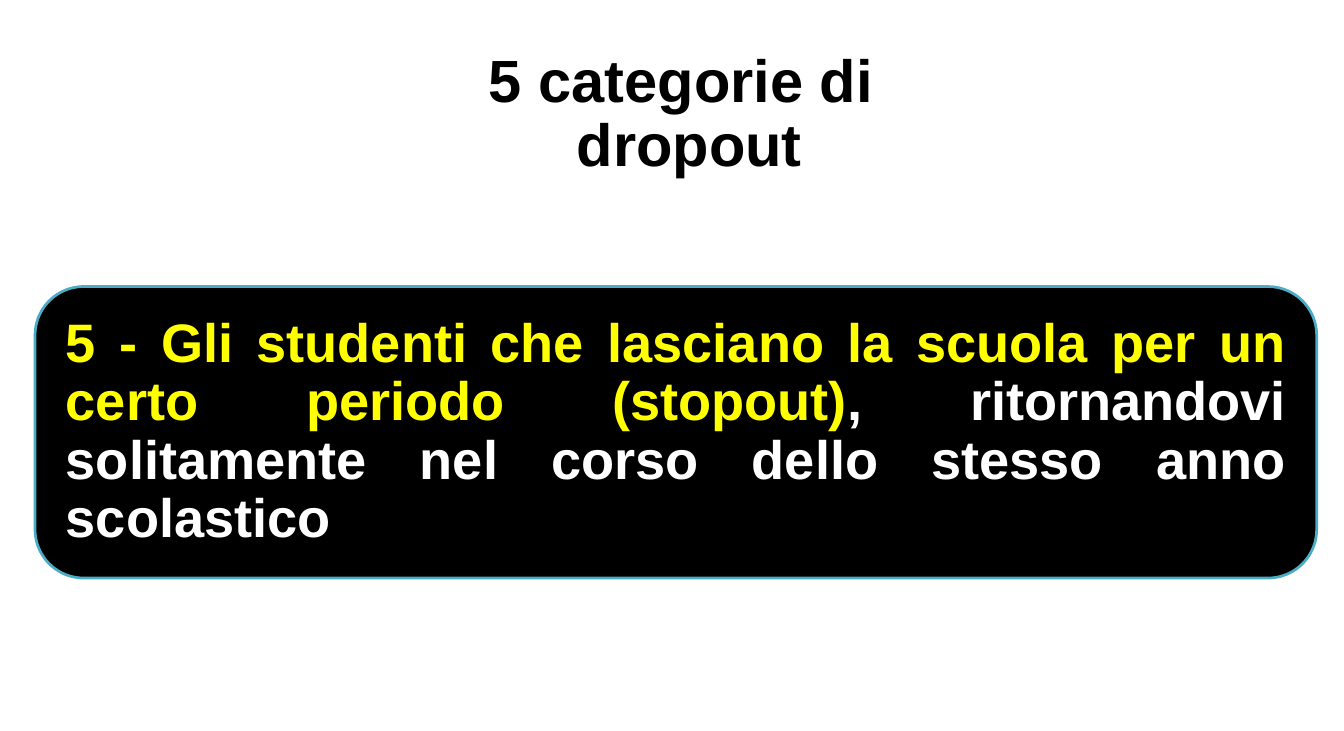
from dataclasses import dataclass

from pptx import Presentation
from pptx.dml.color import RGBColor
from pptx.enum.shapes import MSO_SHAPE
from pptx.enum.text import MSO_ANCHOR, PP_ALIGN
from pptx.util import Emu, Pt

EMU_PER_PX = 9144  # 100 px to the inch

BLACK = RGBColor(0x00, 0x00, 0x00)
WHITE = RGBColor(0xFF, 0xFF, 0xFF)
YELLOW = RGBColor(0xFF, 0xFF, 0x00)
TEAL = RGBColor(0x4B, 0xAC, 0xC6)


@dataclass(frozen=True)
class Span:
    text: str
    color: RGBColor


@dataclass(frozen=True)
class Block:
    left: int
    top: int
    width: int
    height: int
    size: int
    align: PP_ALIGN
    inset_x: int
    inset_y: int
    paragraphs: tuple[tuple[Span, ...], ...]


HEADING = Block(
    239, 46, 936, 145, 44, PP_ALIGN.CENTER, 10, 5,
    ((Span("5 categorie di ", BLACK),), (Span("dropout", BLACK),)),
)
STOPOUT = Block(
    36, 294, 1314, 299, 40, PP_ALIGN.JUSTIFY, 17, 17,
    ((
        Span("5 - Gli studenti che lasciano la scuola per un certo periodo (stopout)", YELLOW),
        Span(", ritornandovi solitamente nel corso dello stesso anno scolastico", WHITE),
    ),),
)


def px(length: int) -> Emu:
    return Emu(length * EMU_PER_PX)


def bounds(block: Block) -> tuple[Emu, Emu, Emu, Emu]:
    return px(block.left), px(block.top), px(block.width), px(block.height)


def write_text(frame, block: Block) -> None:
    frame.word_wrap = True
    frame.vertical_anchor = MSO_ANCHOR.MIDDLE
    frame.margin_left = frame.margin_right = px(block.inset_x)
    frame.margin_top = frame.margin_bottom = px(block.inset_y)
    for index, spans in enumerate(block.paragraphs):
        paragraph = frame.add_paragraph() if index else frame.paragraphs[0]
        paragraph.alignment = block.align
        paragraph.line_spacing = 0.9
        for span in spans:
            run = paragraph.add_run()
            run.text = span.text
            run.font.name = "Arial"
            run.font.size = Pt(block.size)
            run.font.bold = True
            run.font.color.rgb = span.color


def add_panel(slide, block: Block) -> None:
    panel = slide.shapes.add_shape(MSO_SHAPE.ROUNDED_RECTANGLE, *bounds(block))
    panel.shadow.inherit = False
    panel.fill.solid()
    panel.fill.fore_color.rgb = BLACK
    panel.line.color.rgb = TEAL
    panel.line.width = Pt(2)
    write_text(panel.text_frame, block)


def add_heading(slide, block: Block) -> None:
    heading = slide.shapes.add_textbox(*bounds(block))
    write_text(heading.text_frame, block)


def main() -> None:
    deck = Presentation()
    deck.slide_width, deck.slide_height = px(1378), px(750)
    slide = deck.slides.add_slide(deck.slide_layouts[6])

    # Fifth category
    add_panel(slide, STOPOUT)

    # Slide heading
    add_heading(slide, HEADING)

    deck.save("out.pptx")


if __name__ == "__main__":
    main()
